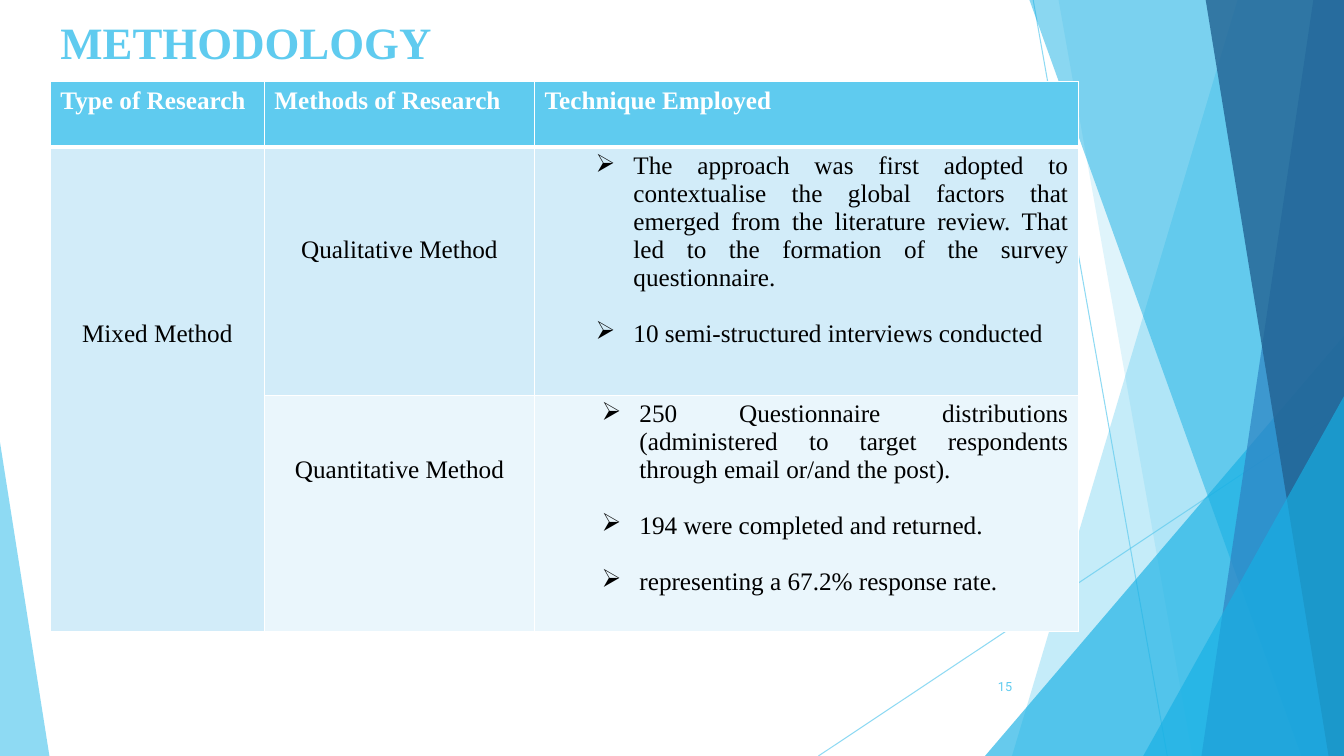
from lxml.etree import SubElement
from pptx import Presentation
from pptx.dml.color import RGBColor
from pptx.enum.shapes import MSO_CONNECTOR as CONN, MSO_SHAPE as SHAPE
from pptx.enum.text import MSO_ANCHOR as ANCHOR, PP_ALIGN as ALIGN
from pptx.oxml.ns import qn
from pptx.util import Pt

COLORS = {
    "sky": "5FCBEF", "cyan": "17B0E4", "blue": "2E83C3", "navy": "226292",
    "band1": "D2ECF9", "band2": "EAF6FC", "white": "FFFFFF", "black": "000000",
}
SERIF = "Times New Roman"
LINE = 20  # height of one 18 pt line
PAD = 3.6  # usual top margin of a cell


def rgb(name):
    return RGBColor.from_string(COLORS[name])


def set_alpha(fill_holder, percent):
    clr = next(fill_holder.iter(qn("a:srgbClr")))
    SubElement(clr, qn("a:alpha")).set("val", str(percent * 1000))


def write(p, text, size=18, font=SERIF, color="black", bold=False,
          align=ALIGN.LEFT, before=0, left=0, bullet=None):
    p.alignment = align
    p.space_before = Pt(before)
    r = p.add_run()
    r.text = text
    r.font.size, r.font.name, r.font.bold = Pt(size), font, bold
    r.font.color.rgb = rgb(color)
    if bullet:
        pPr = p._p.get_or_add_pPr()
        pPr.set("marL", str(Pt(left)))
        pPr.set("indent", str(-Pt(27)))
        SubElement(pPr, qn("a:buChar")).set("char", bullet)


def paint(sp, color, alpha):
    sp.shadow.inherit = False
    sp.fill.solid()
    sp.fill.fore_color.rgb = rgb(color)
    set_alpha(sp._element.spPr, alpha)
    sp.line.fill.background()


def add_line(shapes, x1, y1, x2, y2):
    line = shapes.add_connector(CONN.STRAIGHT, Pt(x1), Pt(y1), Pt(x2), Pt(y2))
    line.line.color.rgb = rgb("sky")
    line.line.width = Pt(0.75)
    spPr = line._element.spPr
    set_alpha(spPr, 70)
    SubElement(spPr, qn("a:effectLst"))


def add_panel(shapes, top_x, bottom_x, right, top, bottom, color, alpha):
    """Band between a slanted left edge and the right side."""
    corners = [(right, top), (right, bottom), (bottom_x, bottom)]
    ff = shapes.build_freeform(Pt(top_x), Pt(top), scale=1.0)
    ff.add_line_segments([(Pt(a), Pt(b)) for a, b in corners], close=True)
    paint(ff.convert_to_shape(), color, alpha)


def add_triangle(shapes, x, y, w, h, apex, color, alpha):
    sp = shapes.add_shape(SHAPE.ISOSCELES_TRIANGLE, Pt(x), Pt(y), Pt(w), Pt(h))
    sp.adjustments[0] = apex
    paint(sp, color, alpha)


def add_facets(shapes, x, y, w, h):
    right, bottom = x + w, y + h

    def panel(top_x, bottom_x, color, alpha):
        add_panel(shapes, x + top_x, x + bottom_x, right, y - 0.7, bottom, color, alpha)

    def corner(width, height):
        add_triangle(shapes, right - width, bottom - height, width, height, 1, "cyan", 66)

    add_line(shapes, x + 738, y, x + 833.8, bottom)
    add_line(shapes, right, y + 290.2, x + 584.6, bottom)
    panel(884.2, 722.9, "sky", 36)
    panel(756, 851.8, "sky", 20)
    corner(256.4, 300.2)
    panel(735.1, 929.5, "cyan", 50)
    panel(938.2, 858.2, "blue", 70)
    panel(861.1, 949, "navy", 80)
    corner(143.4, 257)
    add_triangle(shapes, x, bottom - 224, 35.3, 224, 0, "sky", 70)


def add_title(slide, x, y, w, h):
    sp = slide.shapes.title
    sp.left, sp.top, sp.width, sp.height = Pt(x), Pt(y), Pt(w), Pt(h)
    tf = sp.text_frame
    tf.vertical_anchor = ANCHOR.TOP
    tf.margin_top = Pt(7.2)
    write(tf.paragraphs[0], "METHODOLOGY", size=32, color="sky", bold=True)


def style_cell(cell, fill, bottom=1):
    tcPr = cell._tc.get_or_add_tcPr()
    for side in "LRTB":
        ln = SubElement(tcPr, qn("a:ln" + side))
        ln.set("w", str(Pt(bottom if side == "B" else 1)))
        clr = SubElement(SubElement(ln, qn("a:solidFill")), qn("a:srgbClr"))
        clr.set("val", COLORS["white"])
    cell.fill.solid()
    cell.fill.fore_color.rgb = rgb(fill)


def add_method_table(shapes, x, y, w, h):
    headers = ["Type of Research", "Methods of Research", "Technique Employed"]
    # method, lines above it, bullet indent, techniques
    methods = [
        ("Qualitative Method", 3, 63.4, [
            "The approach was first adopted to contextualise the global factors that "
            "emerged from the literature review. That led to the formation of the "
            "survey questionnaire.",
            "10 semi-structured interviews conducted"]),
        ("Quantitative Method", 2, 67.7, [
            "250 Questionnaire distributions (administered to target respondents "
            "through email or/and the post).",
            "194 were completed and returned.",
            "representing a 67.2% response rate."]),
    ]
    table = shapes.add_table(3, 3, Pt(x), Pt(y), Pt(w), Pt(h)).table
    for col, share in zip(table.columns, (0.208, 0.263, 0.529)):
        col.width = Pt(round(w * share, 1))
    for row, share in zip(table.rows, (0.119, 0.451, 0.43)):
        row.height = Pt(round(h * share, 1))

    def label(cell, text, lines_above):
        cell.margin_top = Pt(PAD + lines_above * LINE)
        write(cell.text_frame.paragraphs[0], text, align=ALIGN.CENTER)

    # Header row
    for c, text in enumerate(headers):
        cell = table.cell(0, c)
        style_cell(cell, "sky", bottom=3)
        write(cell.text_frame.paragraphs[0], text, color="white", bold=True)

    # Type column, spanning both methods
    table.cell(1, 0).merge(table.cell(2, 0))
    for r in (1, 2):
        style_cell(table.cell(r, 0), "band1")
    label(table.cell(1, 0), "Mixed Method", 6)

    # Methods and techniques
    for r, (method, lines_above, left, techniques) in enumerate(methods, 1):
        for c in (1, 2):
            style_cell(table.cell(r, c), f"band{r}")
        label(table.cell(r, 1), method, lines_above)
        tf = table.cell(r, 2).text_frame
        for i, text in enumerate(techniques):
            p = tf.add_paragraph() if i else tf.paragraphs[0]
            write(p, text, align=ALIGN.JUSTIFY, before=LINE if i else 0,
                  left=left, bullet="➢")


def add_page_number(shapes, x, y, w, h):
    tf = shapes.add_textbox(Pt(x), Pt(y), Pt(w), Pt(h)).text_frame
    tf.word_wrap = True
    tf.vertical_anchor = ANCHOR.MIDDLE
    write(tf.paragraphs[0], "15", size=9, font="Roboto", color="sky", align=ALIGN.RIGHT)


def main():
    prs = Presentation()
    prs.slide_width, prs.slide_height = Pt(960), Pt(540)
    slide = prs.slides.add_slide(prs.slide_layouts[5])
    add_facets(slide.shapes, 0, 0, 960, 540)
    add_title(slide, 36, 3.6, 676.8, 54.7)
    add_method_table(slide.shapes, 36, 58.3, 734.4, 393)
    add_page_number(slide.shapes, 676, 476, 54, 28.8)
    prs.save("out.pptx")


if __name__ == "__main__":
    main()
